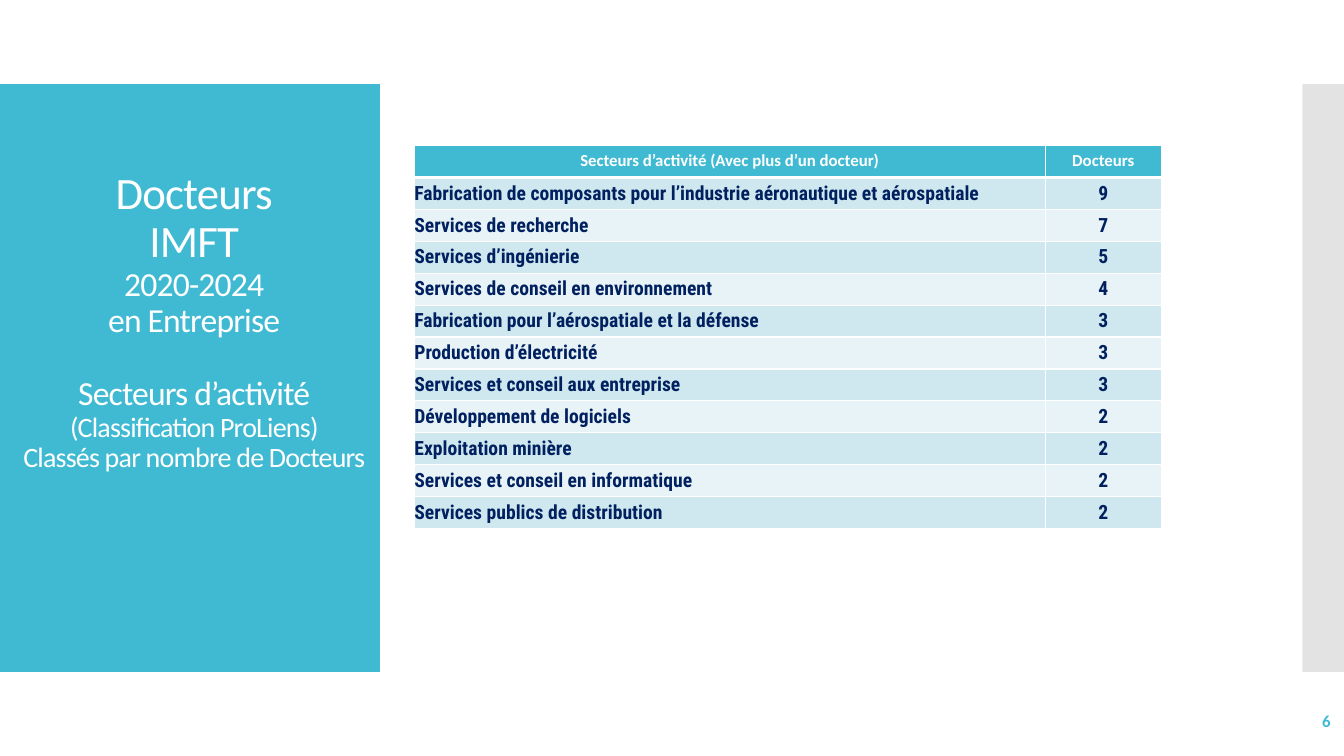
from dataclasses import dataclass

from lxml.etree import SubElement
from pptx import Presentation
from pptx.dml.color import RGBColor
from pptx.enum.shapes import MSO_SHAPE
from pptx.enum.text import MSO_ANCHOR, PP_ALIGN
from pptx.oxml import parse_xml
from pptx.oxml.ns import nsdecls, qn
from pptx.util import Pt


@dataclass(frozen=True)
class Theme:
    accent: str = "40BAD2"
    side: str = "C8C8C8"
    white: str = "FFFFFF"
    navy: str = "002060"
    bands: tuple = ("CFE7EE", "E8F3F7")
    font: str = "Calibri"
    body_font: str = "Roboto Condensed"
    title: int = 32
    subtitle: int = 24
    detail: int = 20
    body: int = 14
    small: int = 12


THEME = Theme()

TITLE_LINES = [
    ("Docteurs", THEME.title, 0),
    ("IMFT", THEME.title, 0),
    ("2020-2024", THEME.subtitle, 0),
    ("en Entreprise", THEME.subtitle, 0),
    ("Secteurs d’activité", THEME.subtitle, 26.4),
    ("(Classification ProLiens)", THEME.detail, 0),
    ("Classés par nombre de Docteurs", THEME.detail, 0),
]

HEADINGS = ("Secteurs d’activité (Avec plus d’un docteur)", "Docteurs")
SECTORS = [
    ("Fabrication de composants pour l’industrie aéronautique et aérospatiale", 9),
    ("Services de recherche", 7),
    ("Services d’ingénierie", 5),
    ("Services de conseil en environnement", 4),
    ("Fabrication pour l’aérospatiale et la défense", 3),
    ("Production d’électricité", 3),
    ("Services et conseil aux entreprise", 3),
    ("Développement de logiciels", 2),
    ("Exploitation minière", 2),
    ("Services et conseil en informatique", 2),
    ("Services publics de distribution", 2),
]


def write(paragraph, text, *, size, color=THEME.white, font=THEME.font, bold=False,
          align=PP_ALIGN.CENTER, line_spacing=None, space_before=0, tracking=None):
    paragraph.alignment = align
    paragraph.space_before = Pt(space_before)
    if line_spacing:
        paragraph.line_spacing = line_spacing
    run = paragraph.add_run()
    run.text = text
    run.font.size = Pt(size)
    run.font.name = font
    run.font.bold = bold
    run.font.color.rgb = RGBColor.from_string(color)
    if tracking:
        run.font._element.set("spc", str(round(tracking * 100)))


def add_panel(slide, left, width, color, opacity=None):
    panel = slide.shapes.add_shape(MSO_SHAPE.RECTANGLE, Pt(left), Pt(60), Pt(width), Pt(420))
    panel.shadow.inherit = False
    panel.fill.solid()
    panel.fill.fore_color.rgb = RGBColor.from_string(color)
    panel.line.fill.background()
    if opacity:
        tint = panel._element.spPr.find(qn("a:solidFill"))[0]
        SubElement(tint, qn("a:alpha")).set("val", str(opacity * 1000))


def add_text_frame(slide, left, top, width, height):
    frame = slide.shapes.add_textbox(Pt(left), Pt(top), Pt(width), Pt(height)).text_frame
    frame.word_wrap = True
    frame.vertical_anchor = MSO_ANCHOR.MIDDLE
    return frame


def add_title(slide):
    frame = add_text_frame(slide, 8, 88.6, 261.4, 362)
    frame.margin_bottom = Pt(83)
    for index, (line, size, gap) in enumerate(TITLE_LINES):
        paragraph = frame.add_paragraph() if index else frame.paragraphs[0]
        write(paragraph, line, size=size, line_spacing=0.9, space_before=gap, tracking=-0.6)


def set_borders(cell, top=1, bottom=1):
    properties = cell._tc.get_or_add_tcPr()
    widths = {"lnL": 1, "lnR": 1, "lnT": top, "lnB": bottom}
    for index, (side, width) in enumerate(widths.items()):
        properties.insert(index, parse_xml(
            f'<a:{side} {nsdecls("a")} w="{Pt(width)}"><a:solidFill>'
            f'<a:srgbClr val="{THEME.white}"/></a:solidFill></a:{side}>'))


def fill_cell(cell, text, fill, **style):
    cell.fill.solid()
    cell.fill.fore_color.rgb = RGBColor.from_string(fill)
    write(cell.text_frame.paragraphs[0], text, bold=True, **style)


def add_sector_table(slide):
    row_count = len(SECTORS) + 1
    table = slide.shapes.add_table(
        row_count, 2, Pt(296), Pt(104), Pt(533.5), Pt(22.8 * row_count)).table
    for column, width in zip(table.columns, (450.7, 82.8)):
        column.width = Pt(width)
    for column, heading in enumerate(HEADINGS):
        cell = table.cell(0, column)
        fill_cell(cell, heading, THEME.accent, size=THEME.small)
        set_borders(cell, bottom=3)
    for row, sector in enumerate(SECTORS, 1):
        for column, value in enumerate(sector):
            cell = table.cell(row, column)
            cell.margin_left = cell.margin_right = cell.margin_top = cell.margin_bottom = 0
            cell.vertical_anchor = MSO_ANCHOR.MIDDLE
            fill_cell(cell, str(value), THEME.bands[(row - 1) % 2], size=THEME.body,
                      color=THEME.navy, font=THEME.body_font,
                      align=PP_ALIGN.CENTER if column else PP_ALIGN.LEFT)
            set_borders(cell, top=3 if row == 1 else 1)


def add_page_number(slide):
    frame = add_text_frame(slide, 837.4, 500.4, 120.2, 28.8)
    write(frame.paragraphs[0], "6", size=THEME.small, color=THEME.accent, bold=True,
          align=PP_ALIGN.RIGHT)


def main():
    deck = Presentation()
    deck.slide_width, deck.slide_height = Pt(960), Pt(540)
    slide = deck.slides.add_slide(deck.slide_layouts[6])
    add_panel(slide, 0, 271.4, THEME.accent)
    add_panel(slide, 930.2, 29.8, THEME.side, opacity=50)
    add_title(slide)
    add_page_number(slide)
    add_sector_table(slide)
    deck.save("out.pptx")


if __name__ == "__main__":
    main()
